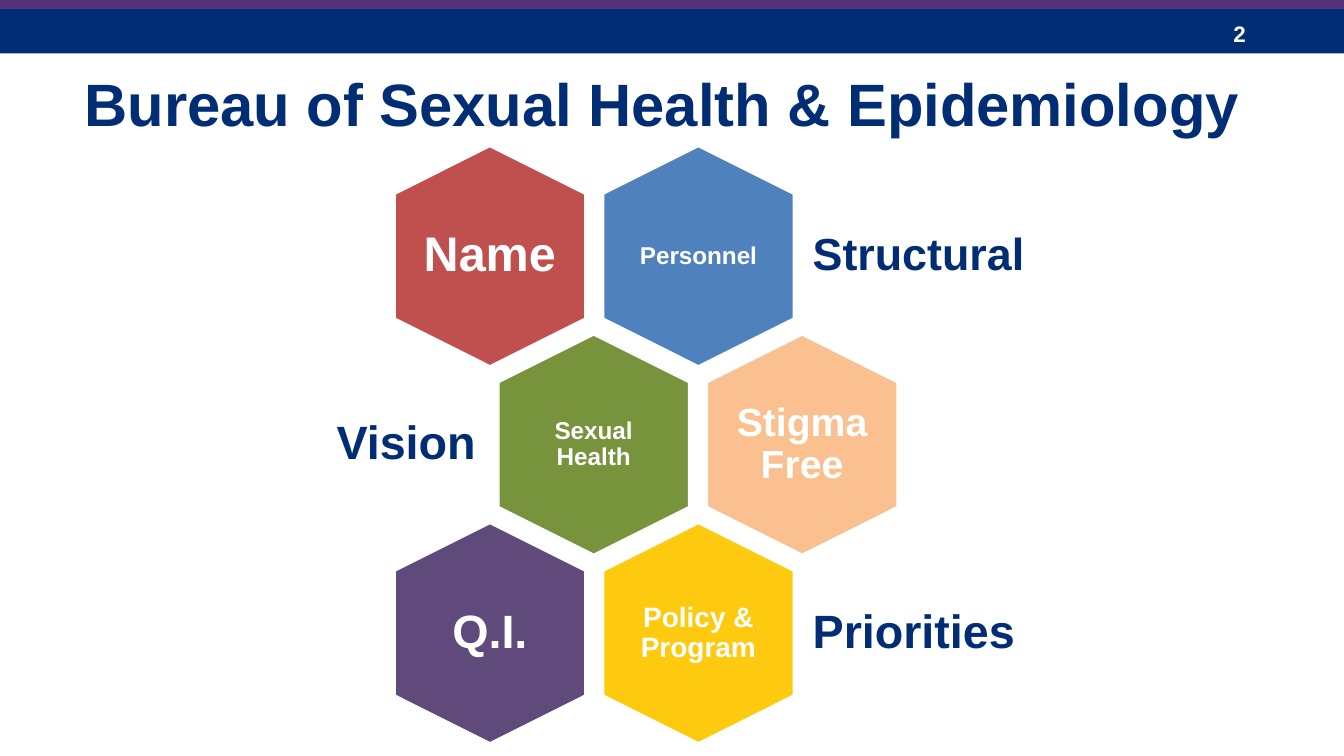
from pptx import Presentation
from pptx.dml.color import RGBColor
from pptx.enum import shapes, text
from pptx.util import Cm, Pt

COLORS = {
    "navy": "002D73", "purple": "553278", "white": "FFFFFF",
    "blue": "4F81BD", "red": "C0504D", "green": "77933C",
    "peach": "FAC090", "yellow": "FDCA0F", "violet": "604A7B",
}
LEFT, CENTER, RIGHT = text.PP_ALIGN.LEFT, text.PP_ALIGN.CENTER, text.PP_ALIGN.RIGHT
TOP, MIDDLE = text.MSO_ANCHOR.TOP, text.MSO_ANCHOR.MIDDLE

presentation = Presentation()
presentation.slide_width, presentation.slide_height = Cm(25.4), Cm(14.28)
slide = presentation.slides.add_slide(presentation.slide_layouts[6])


def add_filled(kind, left, top, width, height, color):
    shape = slide.shapes.add_shape(kind, Cm(left), Cm(top), Cm(width), Cm(height))
    shape.shadow.inherit = False
    shape.fill.solid()
    shape.fill.fore_color.rgb = RGBColor.from_string(COLORS[color])
    shape.line.fill.background()
    return shape


def add_label(wording, left, top, width, height, size, color, align,
              anchor=MIDDLE, inset=0.25, spacing=0.9):
    box = slide.shapes.add_textbox(Cm(left), Cm(top), Cm(width), Cm(height))
    frame = box.text_frame
    frame.word_wrap = True
    frame.vertical_anchor = anchor
    frame.margin_left = frame.margin_right = Cm(inset)
    frame.margin_top = frame.margin_bottom = Cm(inset if anchor == MIDDLE else 0.13)
    paragraph = frame.paragraphs[0]
    paragraph.text = wording
    paragraph.alignment = align
    paragraph.line_spacing = spacing
    paragraph.font.name = "Arial"
    paragraph.font.size = Pt(size)
    paragraph.font.bold = True
    paragraph.font.color.rgb = RGBColor.from_string(COLORS[color])


rectangle = shapes.MSO_SHAPE.RECTANGLE
add_filled(rectangle, 0, 0.17, 25.4, 0.84, "navy")
add_label("2", 23.06, 0.25, 1.9, 0.76, 12, "white", LEFT, TOP, spacing=1)
add_filled(rectangle, 0, -0.05, 25.4, 0.22, "purple")
add_label("Bureau of Sexual Health & Epidemiology", 0.46, 1.14, 24.13, 1.63,
          32, "navy", CENTER, TOP, spacing=1)

first_x, first_y = 9.26, 4.84
column_step, row_step, row_shift = 3.94, 3.56, 1.96
hexagon_length, hexagon_width = 4.19, 3.63
label_width, label_height = 2.52, 2.87

hexagons = [
    ("Personnel", 0, 1, "blue", 13, 0.13),
    ("Name", 0, 0, "red", 26, 0),
    ("Sexual Health", 1, 0, "green", 13, 0.13),
    ("Stigma Free", 1, 1, "peach", 21, 0),
    ("Policy & Program", 2, 1, "yellow", 15, 0.15),
    ("Q.I.", 2, 0, "violet", 25, 0),
]
for wording, row, column, color, size, inset in hexagons:
    x = first_x + column * column_step + row % 2 * row_shift
    y = first_y + row * row_step
    hexagon = add_filled(shapes.MSO_SHAPE.HEXAGON, x - hexagon_length / 2,
                         y - hexagon_width / 2, hexagon_length, hexagon_width, color)
    hexagon.rotation = 90
    hexagon.adjustments[0] = 0.25
    hexagon.line.color.rgb = RGBColor.from_string(COLORS["white"])
    hexagon.line.width = Pt(2)
    add_label(wording, x - label_width / 2, y - label_height / 2,
              label_width, label_height, size, "white", CENTER, inset=inset)

side_height = 2.51
side_labels = [
    ("Structural", 0, 15.11, 4.67, 24, LEFT),
    ("Vision", 1, 4.72, 4.52, 25, RIGHT),
    ("Priorities", 2, 15.11, 4.67, 25, LEFT),
]
for wording, row, left, width, size, align in side_labels:
    top = first_y + row * row_step - side_height / 2
    add_label(wording, left, top, width, side_height, size, "navy", align)

presentation.save("out.pptx")
